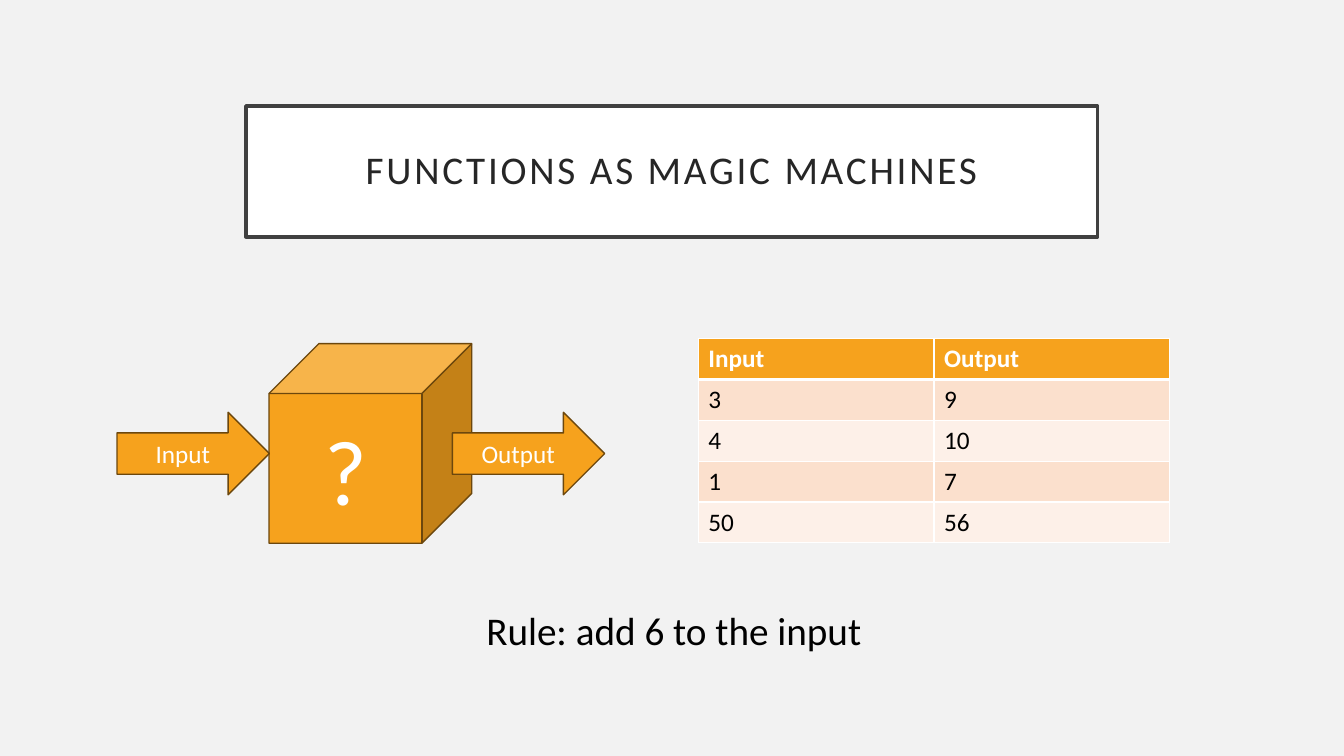
from pptx import Presentation
from pptx.dml.color import RGBColor
from pptx.enum.shapes import MSO_SHAPE as Shape
from pptx.enum.text import MSO_ANCHOR as Anchor, PP_ALIGN as Align
from pptx.oxml import parse_xml
from pptx.oxml.ns import nsdecls
from pptx.util import Cm, Pt

COLORS = {
    "background": "F2F2F2",
    "white": "FFFFFF",
    "black": "000000",
    "title_text": "262626",
    "title_line": "404040",
    "orange": "F6A21D",
    "brown": "6C470D",
    "band_dark": "FBE0CD",
    "band_light": "FDF0E8",
}


def color(name):
    return RGBColor.from_string(COLORS[name])


def write(frame, text, size, color_name, align=Align.CENTER, bold=False):
    """Put one formatted run in the frame and return it."""
    frame.word_wrap = True
    paragraph = frame.paragraphs[0]
    paragraph.alignment = align
    run = paragraph.add_run()
    run.text = text
    formats = {"name": "Calibri", "size": Pt(size), "bold": bold}
    for attribute, value in formats.items():
        setattr(run.font, attribute, value)
    run.font.color.rgb = color(color_name)
    return run


presentation = Presentation()
presentation.slide_width = Cm(33.87)
presentation.slide_height = Cm(19.05)
slide = presentation.slides.add_slide(presentation.slide_layouts[6])
slide.background.fill.solid()
slide.background.fill.fore_color.rgb = color("background")

# Input and output table
rows = [("Input", "Output"), (3, 9), (4, 10), (1, 7), (50, 56)]
table = slide.shapes.add_table(
    len(rows), 2, Cm(17.6), Cm(8.53), Cm(11.88), Cm(5.15)
).table
for row_index, values in enumerate(rows):
    table.rows[row_index].height = Cm(1.03)
    header = row_index == 0
    band = "band_dark" if row_index % 2 else "band_light"
    for column_index, value in enumerate(values):
        cell = table.cell(row_index, column_index)
        write(cell.text_frame, str(value), 18,
              "white" if header else "black", Align.LEFT, header)
        properties = cell._tc.get_or_add_tcPr()
        for side in "LRTB":
            thick = (header and side == "B") or (row_index == 1 and side == "T")
            properties.append(parse_xml(
                f'<a:ln{side} {nsdecls("a")} w="{Pt(3 if thick else 1)}">'
                f'<a:solidFill><a:srgbClr val="{COLORS["white"]}"/></a:solidFill>'
                f'</a:ln{side}>'
            ))
        cell.fill.solid()
        cell.fill.fore_color.rgb = color("orange" if header else band)

# Title box and machine: kind, position, fill, line, line width, text, size, text colour
machine_style = ("orange", "brown", 1)
boxes = [
    (Shape.RECTANGLE, (6.2, 2.67, 21.46, 3.3), ("white", "title_line", 2.5),
     "FUNCTIONS AS MAGIC MACHINES", 28, "title_text"),
    (Shape.CUBE, (6.78, 8.66, 5.11, 5.03), machine_style, "?", 66, "white"),
    (Shape.RIGHT_ARROW, (2.95, 10.39, 3.84, 2.08), machine_style, "Input", 18, "white"),
    (Shape.RIGHT_ARROW, (11.4, 10.39, 3.84, 2.08), machine_style, "Output", 18, "white"),
]
for kind, position, (fill, line, width), text, size, text_color in boxes:
    shape = slide.shapes.add_shape(kind, *map(Cm, position))
    shape.shadow.inherit = False
    shape.fill.solid()
    shape.fill.fore_color.rgb = color(fill)
    shape.line.color.rgb = color(line)
    shape.line.width = Pt(width)
    shape.text_frame.vertical_anchor = Anchor.MIDDLE
    run = write(shape.text_frame, text, size, text_color)
    if kind == Shape.RECTANGLE:
        run._r.get_or_add_rPr().set("spc", "200")
        shape.text_frame.paragraphs[0].line_spacing = 0.9
        for side in ("left", "top", "right", "bottom"):
            setattr(shape.text_frame, f"margin_{side}", Cm(0.51))

rule = slide.shapes.add_textbox(Cm(11.05), Cm(15.16), Cm(11.86), Cm(1.45))
write(rule.text_frame, "Rule: add 6 to the input", 28, "black")

presentation.save("out.pptx")
